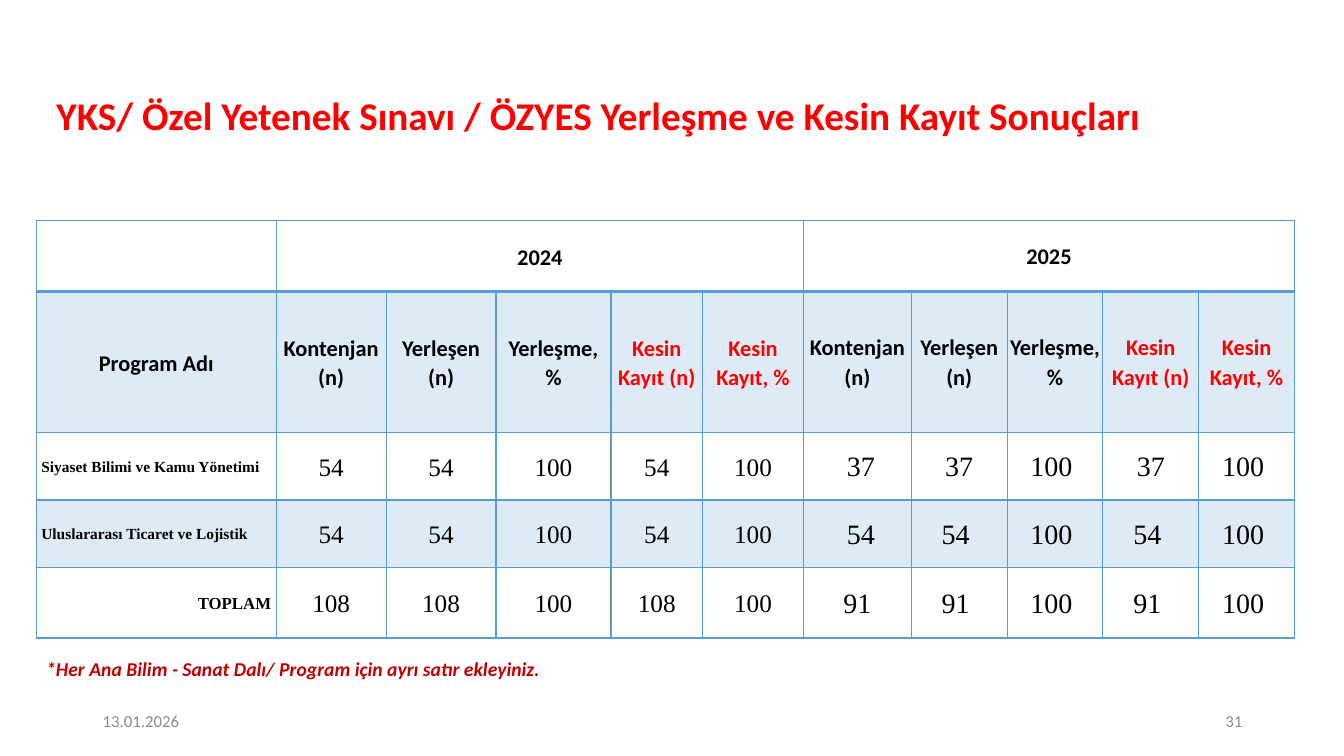
from dataclasses import dataclass

from lxml.etree import SubElement
from pptx import Presentation
from pptx.dml.color import RGBColor as RGB
from pptx.enum.text import MSO_ANCHOR as Anchor, PP_ALIGN as Align
from pptx.oxml import parse_xml
from pptx.oxml.ns import nsdecls, qn
from pptx.util import Inches, Pt


@dataclass(frozen=True)
class Theme:
    sans: str = "Calibri"
    serif: str = "Times New Roman"
    black: str = "000000"
    red: str = "FF0000"
    dark_red: str = "C00000"
    gray: str = "8C8C8C"
    blue: str = "5B9BD5"
    title: int = 28
    header: int = 16
    note: int = 14
    footer: int = 12
    program: int = 11
    total: int = 12
    value_2024: int = 18
    value_2025: int = 20


T = Theme()


def add_text(tf, text, size, color, font=T.sans, bold=False, italic=False,
             align=Align.LEFT, spacing=None):
    p = tf.paragraphs[0]
    p.alignment = align
    if spacing:
        p.line_spacing = spacing
    r = p.add_run()
    r.text = text
    r.font.name = font
    r.font.size = Pt(size)
    r.font.bold = bold
    r.font.italic = italic
    r.font.color.rgb = RGB.from_string(color)


def format_cell(cell, shaded, bottom_width):
    if shaded:
        cell.fill.solid()
        cell.fill.fore_color.rgb = RGB.from_string(T.blue)
        color = cell._tc.tcPr.find(".//" + qn("a:srgbClr"))
        SubElement(color, qn("a:alpha")).set("val", "20000")
    else:
        cell.fill.background()
    widths = {"lnL": 1, "lnR": 1, "lnT": 1, "lnB": bottom_width}
    for i, (side, width) in enumerate(widths.items()):
        cell._tc.tcPr.insert(i, parse_xml(
            f'<a:{side} {nsdecls("a")} w="{Pt(width)}"><a:solidFill>'
            f'<a:srgbClr val="{T.blue}"/></a:solidFill></a:{side}>'))


prs = Presentation()
prs.slide_width = Inches(13.33)
prs.slide_height = Inches(7.5)
s = prs.slides.add_slide(prs.slide_layouts[5])

title = s.shapes.title
title.left, title.top = Inches(0.16), Inches(0.82)
title.width, title.height = Inches(11.63), Inches(0.7)
title.text_frame.vertical_anchor = Anchor.MIDDLE
add_text(title.text_frame, "YKS/ Özel Yetenek Sınavı / ÖZYES Yerleşme ve Kesin Kayıt Sonuçları ",
         T.title, T.red, bold=True, align=Align.CENTER, spacing=0.9)

labels = [
    ("13.01.2026", 0.92, 6.95, 3, 0.4, Anchor.MIDDLE,
     dict(size=T.footer, color=T.gray)),
    ("31", 9.42, 6.95, 3, 0.4, Anchor.MIDDLE,
     dict(size=T.footer, color=T.gray, align=Align.RIGHT)),
    ("*Her Ana Bilim - Sanat Dalı/ Program için ayrı satır ekleyiniz.",
     0.36, 6.47, 6.3, 0.34, Anchor.TOP,
     dict(size=T.note, color=T.dark_red, bold=True, italic=True)),
]
for text, x, y, w, h, anchor, style in labels:
    sp = s.shapes.add_textbox(Inches(x), Inches(y), Inches(w), Inches(h))
    tf = sp.text_frame
    tf.word_wrap = True
    tf.vertical_anchor = anchor
    add_text(tf, text, **style)

measures = ["Kontenjan (n)", "Yerleşen (n)", "Yerleşme, %", "Kesin Kayıt (n)", "Kesin Kayıt, %"]
rows = [
    ["", "2024", "", "", "", "", "2025", "", "", "", ""],
    ["Program Adı"] + measures * 2,
    ["Siyaset Bilimi ve Kamu Yönetimi", "54", "54", "100", "54", "100",
     " 37", "37", "100 ", "37", "100 "],
    ["Uluslararası Ticaret ve Lojistik", "54", "54", "100", "54", "100",
     " 54", "54 ", "100 ", "54 ", "100 "],
    ["TOPLAM", "108", "108", "100", "108", "100",
     " 91 ", "91 ", "100 ", "91 ", "100 "],
]
col_widths = [2.38, 1.09, 1.09, 1.14, 0.91, 1, 1.07, 0.95, 0.95, 0.95, 0.95]
row_heights = [0.7, 1.4, 0.67, 0.67, 0.7]
shaded_rows = (1, 3)
total_row = len(rows) - 1
first_2025 = 6

table = s.shapes.add_table(len(rows), len(col_widths), Inches(0.36), Inches(2.19),
                           Inches(12.49), Inches(4.14)).table
table.first_row = False
table.horz_banding = False
for col, width in zip(table.columns, col_widths):
    col.width = Inches(width)
for row, height in zip(table.rows, row_heights):
    row.height = Inches(height)
for start in (1, first_2025):
    table.cell(0, start).merge(table.cell(0, start + 4))

for i, row in enumerate(rows):
    for j, text in enumerate(row):
        cell = table.cell(i, j)
        side = 0 if j >= first_2025 else 0.05
        cell.margin_left = cell.margin_right = Inches(side)
        cell.margin_top = Inches(0 if j >= first_2025 else 0.01)
        cell.margin_bottom = 0
        cell.vertical_anchor = Anchor.MIDDLE
        format_cell(cell, i in shaded_rows, 2 if i == 0 else 1)
        if not text:
            continue
        color, font, align = T.black, T.serif, Align.CENTER
        if i < 2:
            size, font = T.header, T.sans
            color = T.red if text.startswith("Kesin") else T.black
        elif j == 0:
            size = T.total if i == total_row else T.program
            align = Align.RIGHT if i == total_row else Align.LEFT
        else:
            size = T.value_2025 if j >= first_2025 else T.value_2024
        add_text(cell.text_frame, text, size, color, font,
                 bold=i < 2 or j == 0, align=align, spacing=1.07)

prs.save("out.pptx")
